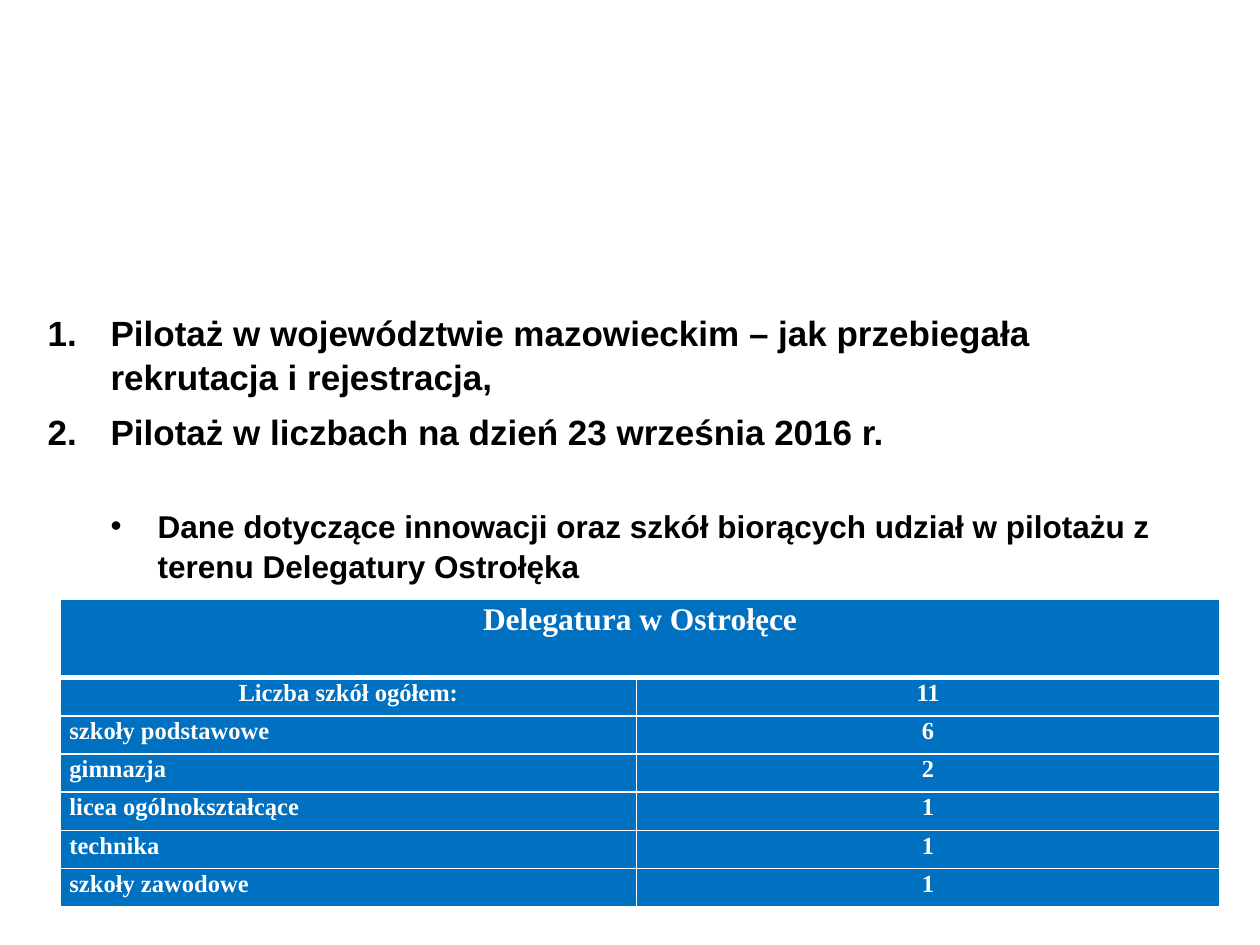
from pptx import Presentation
from pptx.dml.color import RGBColor
from pptx.enum.text import PP_ALIGN
from pptx.oxml.ns import qn
from pptx.util import Cm, Pt
from lxml import etree

LEFT, CENTER = PP_ALIGN.LEFT, PP_ALIGN.CENTER

# Content
AGENDA = [
    "Pilotaż w województwie mazowieckim – jak przebiegała rekrutacja i rejestracja,",
    "Pilotaż w liczbach na dzień 23 września 2016 r.",
]
DATA_NOTE = "Dane dotyczące innowacji oraz szkół biorących udział w pilotażu z terenu Delegatury Ostrołęka"
REGION = "Delegatura w Ostrołęce"
TOTAL = ("Liczba szkół ogółem:", "11")
SCHOOLS = [
    ("szkoły podstawowe", "6"),
    ("gimnazja", "2"),
    ("licea ogólnokształcące", "1"),
    ("technika", "1"),
    ("szkoły zawodowe", "1"),
]

THEME = {
    "body_font": "Arial", "table_font": "Times New Roman",
    "text": "000000", "table_text": "FFFFFF", "cell": "0070C0", "border": "FFFFFF",
    "agenda": 20, "note": 18, "region": 18, "row": 14,
}


def add_text(paragraph, text, font, size, color, formats):
    """Write one bold paragraph with the given paragraph formats."""
    for attribute, value in formats.items():
        setattr(paragraph, attribute, value)
    run = paragraph.add_run()
    run.text = text
    values = {"name": THEME[font], "size": Pt(THEME[size]), "bold": True}
    for attribute, value in values.items():
        setattr(run.font, attribute, value)
    run.font.color.rgb = RGBColor.from_string(THEME[color])


def add_bullet(paragraph, margin, hanging, tag, **attributes):
    properties = paragraph._p.get_or_add_pPr()
    properties.set("marL", str(Cm(margin)))
    properties.set("indent", str(-Cm(hanging)))
    font = etree.SubElement(properties, qn("a:buFont"))
    font.set("typeface", THEME["body_font"])
    etree.SubElement(properties, qn(tag), attributes)


def style_cell(cell, bottom_width):
    """Set margins, borders and fill of a table cell."""
    margins = {"margin_left": 0.18, "margin_right": 0.18, "margin_top": 0, "margin_bottom": 0}
    for attribute, value in margins.items():
        setattr(cell, attribute, Cm(value))
    properties = cell._tc.get_or_add_tcPr()
    for side, width in (("L", 1), ("R", 1), ("T", 1), ("B", bottom_width)):
        line = etree.SubElement(properties, qn(f"a:ln{side}"), w=str(Pt(width)))
        fill = etree.SubElement(line, qn("a:solidFill"))
        etree.SubElement(fill, qn("a:srgbClr"), val=THEME["border"])
    cell.fill.solid()
    cell.fill.fore_color.rgb = RGBColor.from_string(THEME["cell"])


presentation = Presentation()
presentation.slide_width, presentation.slide_height = Cm(25.4), Cm(19.05)
slide = presentation.slides.add_slide(presentation.slide_layouts[6])

# Agenda and note
agenda = slide.shapes.add_textbox(Cm(0.71), Cm(6.12), Cm(23.19), Cm(9.07)).text_frame
agenda.word_wrap = True
for index, item in enumerate(AGENDA):
    paragraph = agenda.add_paragraph() if index else agenda.paragraphs[0]
    add_bullet(paragraph, 1.27, 1.27, "a:buAutoNum", type="arabicPeriod")
    add_text(paragraph, item, "body_font", "agenda", "text",
             {"line_spacing": 1.05, "space_after": Pt(6)})
note = agenda.add_paragraph()
note.level = 1
add_bullet(note, 2.22, 0.95, "a:buChar", char="•")
add_text(note, DATA_NOTE, "body_font", "note", "text",
         {"line_spacing": 1.05, "space_before": Pt(24)})

# School table
column_widths = (11.61, 11.76)
row_heights = [1.57] + [0.77] * (1 + len(SCHOOLS))
rows = [(REGION, ""), TOTAL, *SCHOOLS]
table = slide.shapes.add_table(
    len(rows), 2, Cm(1.22), Cm(12.09), Cm(sum(column_widths)), Cm(sum(row_heights))).table
for column, width in zip(table.columns, column_widths):
    column.width = Cm(width)
for row, height in zip(table.rows, row_heights):
    row.height = Cm(height)
table.cell(0, 0).merge(table.cell(0, 1))

for row_index, values in enumerate(rows):
    for column_index, value in enumerate(values):
        cell = table.cell(row_index, column_index)
        style_cell(cell, bottom_width=1 if row_index else 3)
        if value:
            is_school_name = row_index > 1 and column_index == 0
            add_text(cell.text_frame.paragraphs[0], value, "table_font",
                     "row" if row_index else "region", "table_text",
                     {"alignment": LEFT if is_school_name else CENTER, "line_spacing": 1.07})

presentation.save("out.pptx")
